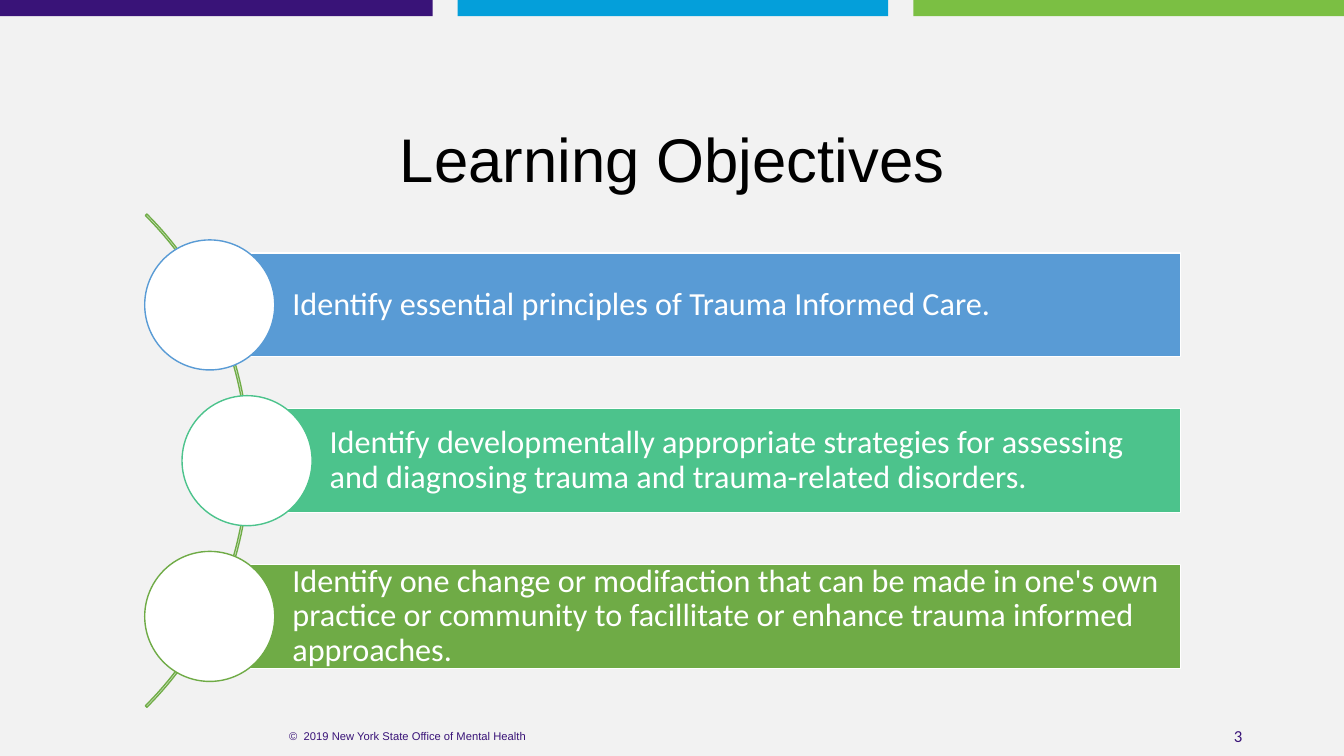
from pptx import Presentation
from pptx.dml.color import RGBColor
from pptx.enum.shapes import MSO_SHAPE
from pptx.enum.text import MSO_ANCHOR, PP_ALIGN
from pptx.util import Inches, Pt

RECTANGLE, OVAL, ARC = MSO_SHAPE.RECTANGLE, MSO_SHAPE.OVAL, MSO_SHAPE.BLOCK_ARC
LEFT, CENTER, RIGHT = PP_ALIGN.LEFT, PP_ALIGN.CENTER, PP_ALIGN.RIGHT
MIDDLE = MSO_ANCHOR.MIDDLE

PURPLE = RGBColor(0x39, 0x13, 0x78)
CYAN = RGBColor(0x04, 0x9F, 0xDA)
LIME = RGBColor(0x7B, 0xBF, 0x43)
BLUE = RGBColor(0x59, 0x9B, 0xD5)
TEAL = RGBColor(0x4C, 0xC3, 0x8C)
GREEN = RGBColor(0x6F, 0xAB, 0x46)
ARC_GREEN = RGBColor(0x70, 0xAD, 0x47)
PALE_GRAY = RGBColor(0xF2, 0xF2, 0xF2)
WHITE = RGBColor(0xFF, 0xFF, 0xFF)
BLACK = RGBColor(0, 0, 0)

TITLE = "Learning Objectives"
# text, colour, horizontal centre of the circle
OBJECTIVES = [
    ("Identify essential principles of Trauma Informed Care.", BLUE, 2.08),
    ("Identify developmentally appropriate strategies for assessing and "
     "diagnosing trauma and trauma-related disorders.", TEAL, 2.45),
    ("Identify one change or modifaction that can be made in one's own "
     "practice or community to facillitate or enhance trauma informed "
     "approaches.", GREEN, 2.08),
]
# text, left, width, alignment, font, size
FOOTERS = [
    ("©  2019 New York State Office of Mental Health", 1.81, 4.47, CENTER, "Arial", 8),
    ("3", 9.42, 3, RIGHT, "Calibri", 12),
]
# left, width, colour
STRIPES = [(0, 4.29, PURPLE), (4.54, 4.27, CYAN), (9.06, 4.27, LIME)]

SLIDE_W, SLIDE_H = 13.33, 7.5
STRIPE_H = 0.16
FOOTER_TOP, FOOTER_H = 7.1, 0.4
MIDDLE_ROW_Y, ROW_PITCH = 4.57, 1.545
BAR_RIGHT, BAR_H = 11.71, 1.03
CIRCLE = 1.29
ARC_CENTER_X, ARC_SIZE = -0.99, 6.92


def add_figure(slide, kind, left, top, width, height, fill=None, line=None):
    figure = slide.shapes.add_shape(
        kind, Inches(left), Inches(top), Inches(width), Inches(height))
    figure.shadow.inherit = False
    if fill is None:
        figure.fill.background()
    else:
        figure.fill.solid()
        figure.fill.fore_color.rgb = fill
    if line is None:
        figure.line.fill.background()
    else:
        figure.line.color.rgb = line
        figure.line.width = Pt(1)
    return figure


def write(holder, text, font, size, color, align, spacing=None,
          insets=(0.1, 0.05, 0.1, 0.05)):
    frame = holder.text_frame
    frame.word_wrap = True
    frame.vertical_anchor = MIDDLE
    (frame.margin_left, frame.margin_top,
     frame.margin_right, frame.margin_bottom) = map(Inches, insets)
    paragraph = frame.paragraphs[0]
    paragraph.text = text
    paragraph.alignment = align
    paragraph.line_spacing = spacing
    paragraph.font.name = font
    paragraph.font.size = Pt(size)
    paragraph.font.color.rgb = color


def add_objectives(slide):
    arc = add_figure(slide, ARC, ARC_CENTER_X - ARC_SIZE / 2,
                     MIDDLE_ROW_Y - ARC_SIZE / 2, ARC_SIZE, ARC_SIZE,
                     line=ARC_GREEN)
    for index, value in enumerate((189, 27, 0.003)):
        arc.adjustments[index] = value

    for row, (text, color, center_x) in enumerate(OBJECTIVES):
        center_y = MIDDLE_ROW_Y + (row - 1) * ROW_PITCH
        bar = add_figure(slide, RECTANGLE, center_x, center_y - BAR_H / 2,
                         BAR_RIGHT - center_x, BAR_H, color, WHITE)
        write(bar, text, "Calibri", 23, WHITE, LEFT, 0.9,
              (0.82, 0.06, 0.06, 0.06))
        add_figure(slide, OVAL, center_x - CIRCLE / 2, center_y - CIRCLE / 2,
                   CIRCLE, CIRCLE, WHITE, color)


def main():
    deck = Presentation()
    deck.slide_width, deck.slide_height = Inches(SLIDE_W), Inches(SLIDE_H)
    title_only = deck.slide_layouts[5]
    slide = deck.slides.add_slide(title_only)
    slide.background.fill.solid()
    slide.background.fill.fore_color.rgb = PALE_GRAY

    for left, width, color in STRIPES:
        add_figure(slide, RECTANGLE, left, 0, width, STRIPE_H, color)
    for text, left, width, align, font, size in FOOTERS:
        footer = slide.shapes.add_textbox(
            Inches(left), Inches(FOOTER_TOP), Inches(width), Inches(FOOTER_H))
        write(footer, text, font, size, PURPLE, align)

    title = slide.shapes.title
    title.left, title.top = Inches(0.92), Inches(1.22)
    title.width, title.height = Inches(11.5), Inches(0.78)
    write(title, TITLE, "Arial", 44, BLACK, CENTER, 0.9)

    add_objectives(slide)
    deck.save("out.pptx")


if __name__ == "__main__":
    main()
